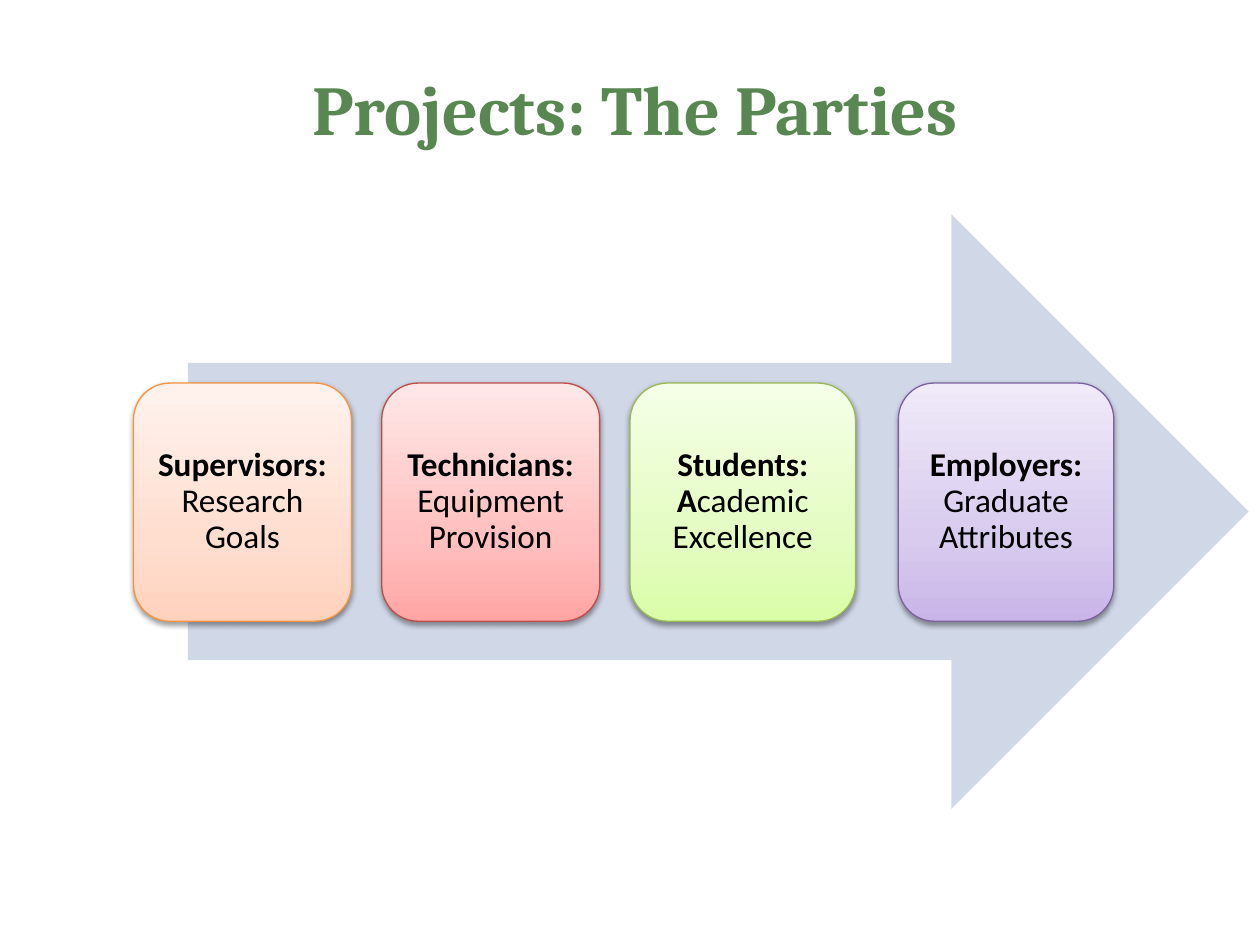
from copy import deepcopy

from lxml import etree
from pptx import Presentation
from pptx import util as u
from pptx.dml.color import RGBColor
from pptx.enum import shapes, text
from pptx.oxml.ns import qn

GREEN = RGBColor(0x59, 0x87, 0x52)
BLACK = RGBColor(0, 0, 0)
PALE = RGBColor(0xD0, 0xD8, 0xE8)

# Bottom, middle and top of the gradient, then the outline
ORANGE = [RGBColor.from_string(c) for c in ("FFD2BD", "FFDED0", "FFF2ED", "F69240")]
RED = [RGBColor.from_string(c) for c in ("FFA6A5", "FFC0BF", "FFE7E7", "BF4C48")]
LIME = [RGBColor.from_string(c) for c in ("DAFDA7", "E4FCC2", "F5FFE7", "98B955")]
PURPLE = [RGBColor.from_string(c) for c in ("C9B5E8", "D8CBEE", "F0EAF9", "7D60A0")]

# Left, width, bold text, plain text, colours
CARDS = [
    (1.06, 1.73, "Supervisors:", " Research Goals", ORANGE),
    (3.03, 1.73, "Technicians:", " Equipment Provision", RED),
    (5.00, 1.79, "Students: A", "cademic Excellence", LIME),
    (7.13, 1.71, "Employers: ", "Graduate Attributes", PURPLE),
]


def write(shape, runs, font, size, color, inset=0, space=None,
          anchor=text.MSO_ANCHOR.TOP):
    """Fill a shape with one centred paragraph of (words, bold) runs."""
    frame = shape.text_frame
    frame.word_wrap = True
    frame.vertical_anchor = anchor
    frame.margin_left = frame.margin_right = u.Inches(inset)
    frame.margin_top = frame.margin_bottom = u.Inches(inset)
    para = frame.paragraphs[0]
    para.alignment = text.PP_ALIGN.CENTER
    para.line_spacing = space
    for words, bold in runs:
        run = para.add_run()
        run.text = words
        run.font.name = font
        run.font.size = u.Pt(size)
        run.font.bold = bold
        run.font.color.rgb = color


def shade(shape, colors):
    """Apply a three-stop gradient that runs from bottom to top."""
    fill = shape.fill
    fill.gradient()
    fill.gradient_angle = 90
    stops = shape._element.spPr.find(".//" + qn("a:gsLst"))
    stops.append(deepcopy(stops[-1]))
    for stop, place, color in zip(fill.gradient_stops, (0, 0.35, 1), colors):
        stop.position = place
        stop.color.rgb = color


def drop(shape):
    """Add a soft shadow straight below the shape."""
    shape.shadow.inherit = False
    effects = shape._element.spPr.find(qn("a:effectLst"))
    outer = etree.SubElement(
        effects, qn("a:outerShdw"), blurRad=str(u.Pt(3.1)),
        dist=str(u.Pt(1.6)), dir="5400000", rotWithShape="0")
    color = etree.SubElement(outer, qn("a:srgbClr"), val="000000")
    etree.SubElement(color, qn("a:alpha"), val="38000")


def add_title(slide, left, top, width, height):
    box = slide.shapes.add_textbox(left, top, width, height)
    write(box, [("Projects: The Parties", True)], "Cambria", 40, GREEN,
          space=u.Pt(48))


def add_arrow(slide, left, top, width, height):
    arrow = slide.shapes.add_shape(
        shapes.MSO_SHAPE.RIGHT_ARROW, left, top, width, height)
    arrow.shadow.inherit = False
    arrow.fill.solid()
    arrow.fill.fore_color.rgb = PALE
    arrow.line.fill.background()


def add_card(slide, left, top, width, height, head, body, colors):
    card = slide.shapes.add_shape(
        shapes.MSO_SHAPE.ROUNDED_RECTANGLE, left, top, width, height)
    shade(card, colors[:3])
    card.line.color.rgb = colors[3]
    card.line.width = u.Pt(0.75)
    drop(card)
    write(card, [(head, True), (body, False)], "Calibri", 19, BLACK,
          inset=0.08, space=0.9, anchor=text.MSO_ANCHOR.MIDDLE)


def main():
    deck = Presentation()
    deck.slide_width, deck.slide_height = u.Inches(10), u.Inches(7.5)
    slide = deck.slides.add_slide(deck.slide_layouts[6])
    add_title(slide, u.Inches(0.59), u.Inches(0.52), u.Inches(8.9), u.Inches(0.87))
    add_arrow(slide, u.Inches(1.49), u.Inches(1.7), u.Inches(8.42), u.Inches(4.72))
    for left, width, head, body, colors in CARDS:
        add_card(slide, u.Inches(left), u.Inches(3.04), u.Inches(width),
                 u.Inches(1.89), head, body, colors)
    deck.save("out.pptx")


if __name__ == "__main__":
    main()
